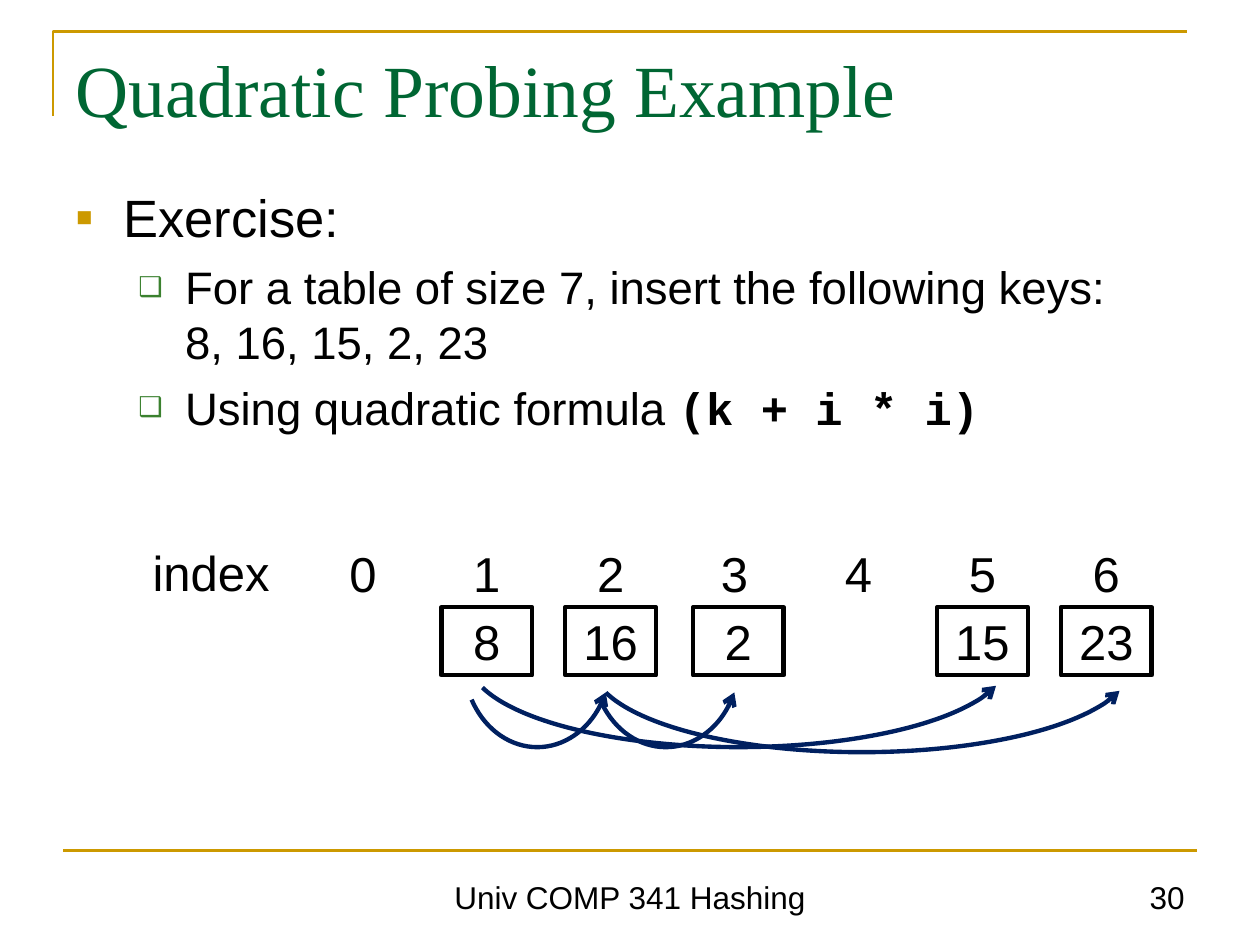
from lxml import etree
from pptx import Presentation
from pptx.dml.color import RGBColor
from pptx.enum.shapes import MSO_CONNECTOR, MSO_SHAPE
from pptx.enum.text import MSO_ANCHOR, PP_ALIGN
from pptx.oxml.ns import qn
from pptx.util import Inches, Pt

COLORS = {
    "text": "000000",
    "title": "006633",
    "rule": "CC9900",
    "sub_bullet": "3B812F",
    "probe": "002060",
}
CELL_WIDTH, CELL_HEIGHT = 0.72, 0.54
INDEX_LEFT, INDEX_TOP, KEY_TOP = 2.52, 4.28, 4.82
INDEX_STEP = 5.9 / 6


def color(name):
    return RGBColor.from_string(COLORS[name])


class SlideBuilder:
    """Holds the slide and its base font, and adds each kind of element."""

    def __init__(self, slide, font="Arial"):
        self.slide = slide
        self.shapes = slide.shapes
        self.font = font

    def format_runs(self, paragraph, size, font=None, tint="text"):
        for run in paragraph.runs:
            run.font.size = Pt(size)
            run.font.name = font or self.font
            run.font.color.rgb = color(tint)

    def outline(self, shape, tint, width):
        shape.line.color.rgb = color(tint)
        shape.line.width = Pt(width)

    def frame(self, left, top, width, height, anchor=MSO_ANCHOR.TOP):
        box = self.shapes.add_textbox(
            Inches(left), Inches(top), Inches(width), Inches(height))
        box.text_frame.word_wrap = True
        box.text_frame.vertical_anchor = anchor
        return box.text_frame

    def label(self, text, left, top, width, height, size, align=PP_ALIGN.CENTER,
              anchor=MSO_ANCHOR.MIDDLE, font=None, tint="text"):
        frame = self.frame(left, top, width, height, anchor)
        frame.text = text
        paragraph = frame.paragraphs[0]
        paragraph.alignment = align
        self.format_runs(paragraph, size, font, tint)

    def bullet(self, paragraph, text, size, char, tint, margin, hang, before,
               level=0, scale=100):
        paragraph.text = text
        paragraph.level = level
        paragraph.space_before = Pt(before)
        self.format_runs(paragraph, size)
        props = paragraph._p.get_or_add_pPr()
        props.set("marL", str(Inches(margin)))
        props.set("indent", str(-Inches(hang)))
        bullet_color = etree.SubElement(props, qn("a:buClr"))
        etree.SubElement(bullet_color, qn("a:srgbClr"), val=COLORS[tint])
        etree.SubElement(props, qn("a:buSzPct"), val=str(scale * 1000))
        etree.SubElement(props, qn("a:buFont"), typeface=self.font)
        etree.SubElement(props, qn("a:buChar"), char=char)

    def key_cell(self, key, left):
        cell = self.shapes.add_shape(
            MSO_SHAPE.RECTANGLE, Inches(left), Inches(KEY_TOP),
            Inches(CELL_WIDTH), Inches(CELL_HEIGHT))
        cell.shadow.inherit = False
        cell.fill.background()
        self.outline(cell, "text", 2.5)
        frame = cell.text_frame
        frame.text = key
        frame.vertical_anchor = MSO_ANCHOR.MIDDLE
        frame.paragraphs[0].alignment = PP_ALIGN.CENTER
        self.format_runs(frame.paragraphs[0], 28)

    def probe_arc(self, left, top, width, start, end):
        """Draw a mirrored arc with an arrowhead; angles are in degrees."""
        arc = self.shapes.add_shape(
            MSO_SHAPE.ARC, Inches(left), Inches(top), Inches(width), Inches(1.38))
        arc.shadow.inherit = False
        arc.fill.background()
        self.outline(arc, "probe", 2.5)
        # An adjustment of 1.0 is 100000 units, and a degree is 60000 units.
        arc.adjustments[0] = start * 0.6
        arc.adjustments[1] = end * 0.6
        arc._element.spPr.find(qn("a:xfrm")).set("flipH", "1")
        etree.SubElement(arc.line._get_or_add_ln(), qn("a:tailEnd"), type="arrow")

    def rule(self, left, right, y):
        line = self.shapes.add_connector(
            MSO_CONNECTOR.STRAIGHT, Inches(left), Inches(y), Inches(right), Inches(y))
        self.outline(line, "rule", 1.5)
        etree.SubElement(line._element.spPr, qn("a:effectLst"))

    def corner(self, left, top, right, bottom):
        pen = self.shapes.build_freeform(Inches(left), Inches(bottom))
        pen.add_line_segments(
            [(Inches(left), Inches(top)), (Inches(right), Inches(top))], close=False)
        corner = pen.convert_to_shape()
        corner.shadow.inherit = False
        corner.fill.background()
        self.outline(corner, "rule", 1.5)


def add_exercise(builder):
    frame = builder.frame(0.5, 1.42, 8.99, 2.4)
    builder.bullet(frame.paragraphs[0], "Exercise:", 30, "▪", "rule", 0.38, 0.38, 7.5)
    for text in ("For a table of size 7, insert the following keys:\v8, 16, 15, 2, 23",
                 "Using quadratic formula "):
        step = frame.add_paragraph()
        builder.bullet(step, text, 26, "❑", "sub_bullet", 0.87, 0.37, 6.5,
                       level=1, scale=60)
    formula = step.add_run()
    formula.text = "(k + i * i)"
    formula.font.size = Pt(26)
    formula.font.name = "Courier New"
    formula.font.bold = True
    formula.font.color.rgb = color("text")


def add_hash_table(builder):
    lefts = [INDEX_LEFT + i * INDEX_STEP for i in range(7)]
    builder.label("index", 1.09, 4.27, 1.17, CELL_HEIGHT, 28)
    for index, left in enumerate(lefts):
        builder.label(str(index), left, INDEX_TOP, CELL_WIDTH, CELL_HEIGHT, 28)
    lefts[3] = 5.5
    for index, key in {1: "8", 2: "16", 3: "2", 5: "15", 6: "23"}.items():
        builder.key_cell(key, lefts[index])
    for left in (3.68, 4.7):
        builder.probe_arc(left, 4.55, 1.17, 30.97, 154.84)
    for left, top in ((3.72, 4.55), (4.7, 4.59)):
        builder.probe_arc(left, top, 4.28, 6.1, 174.33)


def main():
    deck = Presentation()
    deck.slide_width, deck.slide_height = Inches(10), Inches(7.5)
    builder = SlideBuilder(deck.slides.add_slide(deck.slide_layouts[6]))
    builder.corner(0.42, 0.25, 9.42, 0.92)
    builder.rule(0.5, 9.5, 6.75)
    builder.label("Quadratic Probing Example", 0.5, 0.3, 8.99, 1.11, 42,
                  PP_ALIGN.LEFT, MSO_ANCHOR.TOP, "Times New Roman", "title")
    add_exercise(builder)
    builder.label("Univ COMP 341 Hashing", 1.75, 6.83, 6.5, 0.49, 18,
                  anchor=MSO_ANCHOR.BOTTOM)
    builder.label("30", 7.17, 6.83, 2.33, 0.49, 18, PP_ALIGN.RIGHT, MSO_ANCHOR.BOTTOM)
    add_hash_table(builder)
    deck.save("out.pptx")


if __name__ == "__main__":
    main()
